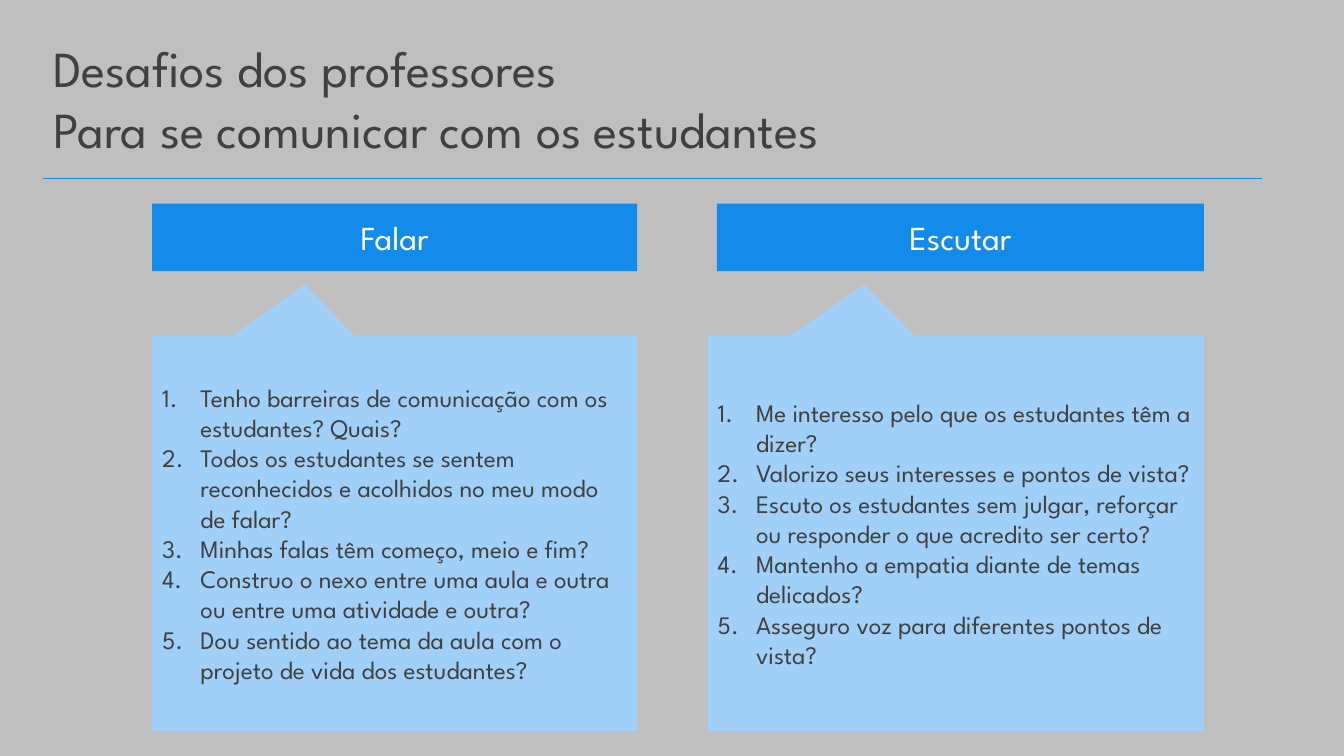
from lxml.etree import SubElement
from pptx import Presentation
from pptx.dml.color import RGBColor
from pptx.enum.shapes import MSO_CONNECTOR, MSO_SHAPE
from pptx.enum.text import MSO_ANCHOR, PP_ALIGN
from pptx.oxml.ns import qn
from pptx.util import Inches, Pt

GREY = RGBColor(0xBF, 0xBF, 0xBF)
BLUE = RGBColor(0x13, 0x8B, 0xEA)
LIGHT_BLUE = RGBColor(0xA0, 0xD0, 0xF7)
DARK = RGBColor(0x40, 0x40, 0x40)
WHITE = RGBColor(0xFF, 0xFF, 0xFF)

TITLE = ["Desafios dos professores", "Para se comunicar com os estudantes"]

# heading, heading left, callout left, right edge, questions
COLUMNS = [
    ("Falar", 1.51, 1.51, 6.32, [
        "Tenho barreiras de comunicação com os estudantes? Quais?",
        "Todos os estudantes se sentem reconhecidos e acolhidos no meu modo de falar?",
        "Minhas falas têm começo, meio e fim?",
        "Construo o nexo entre uma aula e outra ou entre uma atividade e outra?",
        "Dou sentido ao tema da aula com o projeto de vida dos estudantes?",
    ]),
    ("Escutar", 7.11, 7.02, 11.94, [
        "Me interesso pelo que os estudantes têm a dizer?",
        "Valorizo seus interesses e pontos de vista?",
        "Escuto os estudantes sem julgar, reforçar ou responder o que acredito ser certo?",
        "Mantenho a empatia diante de temas delicados?",
        "Asseguro voz para diferentes pontos de vista?",
    ]),
]


class SlideBuilder:
    font = "League Spartan"

    def __init__(self, s):
        self.s = s
        s.background.fill.solid()
        s.background.fill.fore_color.rgb = GREY

    def add_lines(self, tf, lines, size, color, align=PP_ALIGN.LEFT):
        tf.word_wrap = True
        for i, line in enumerate(lines):
            p = tf.add_paragraph() if i else tf.paragraphs[0]
            p.alignment = align
            r = p.add_run()
            r.text = line
            r.font.name = self.font
            r.font.size = Pt(size)
            r.font.color.rgb = color

    def number(self, tf):
        """Number the paragraphs with a hanging indent."""
        for p in tf.paragraphs:
            pPr = p._p.get_or_add_pPr()
            pPr.set("marL", str(Inches(0.38)))
            pPr.set("indent", str(-Inches(0.38)))
            SubElement(pPr, qn("a:buFont"), typeface="+mj-lt")
            SubElement(pPr, qn("a:buAutoNum"), type="arabicPeriod")

    def filled(self, kind, left, top, right, height, color):
        sp = self.s.shapes.add_shape(kind, Inches(left), Inches(top),
                                     Inches(right - left), Inches(height))
        sp.shadow.inherit = False
        sp.fill.solid()
        sp.fill.fore_color.rgb = color
        sp.line.fill.background()
        sp.text_frame.vertical_anchor = MSO_ANCHOR.MIDDLE
        return sp

    def heading(self, text, left, right):
        sp = self.filled(MSO_SHAPE.RECTANGLE, left, 2.02, right, 0.67, BLUE)
        self.add_lines(sp.text_frame, [text], 24, WHITE, PP_ALIGN.CENTER)

    def callout(self, questions, left, right):
        sp = self.filled(MSO_SHAPE.RECTANGULAR_CALLOUT, left, 3.33, right, 3.92, LIGHT_BLUE)
        sp.adjustments[0] = -0.185
        sp.adjustments[1] = -0.63
        self.add_lines(sp.text_frame, questions, 18, DARK)
        self.number(sp.text_frame)

    def title(self, lines):
        sp = self.s.shapes.add_textbox(Inches(0.43), Inches(0.32), Inches(12.9), Inches(1.31))
        self.add_lines(sp.text_frame, lines, 36, DARK)

    def rule(self, left, right, y):
        line = self.s.shapes.add_connector(MSO_CONNECTOR.STRAIGHT, Inches(left), Inches(y),
                                           Inches(right), Inches(y))
        line.line.color.rgb = BLUE
        line.line.width = Pt(0.75)
        SubElement(line._element.spPr, qn("a:effectLst"))


def main():
    prs = Presentation()
    prs.slide_width = Inches(13.33)
    prs.slide_height = Inches(7.5)
    slide = SlideBuilder(prs.slides.add_slide(prs.slide_layouts[6]))
    slide.title(TITLE)
    slide.rule(0.43, 12.52, 1.77)
    for heading, heading_left, callout_left, right, questions in COLUMNS:
        slide.heading(heading, heading_left, right)
        slide.callout(questions, callout_left, right)
    prs.save("out.pptx")


if __name__ == "__main__":
    main()
